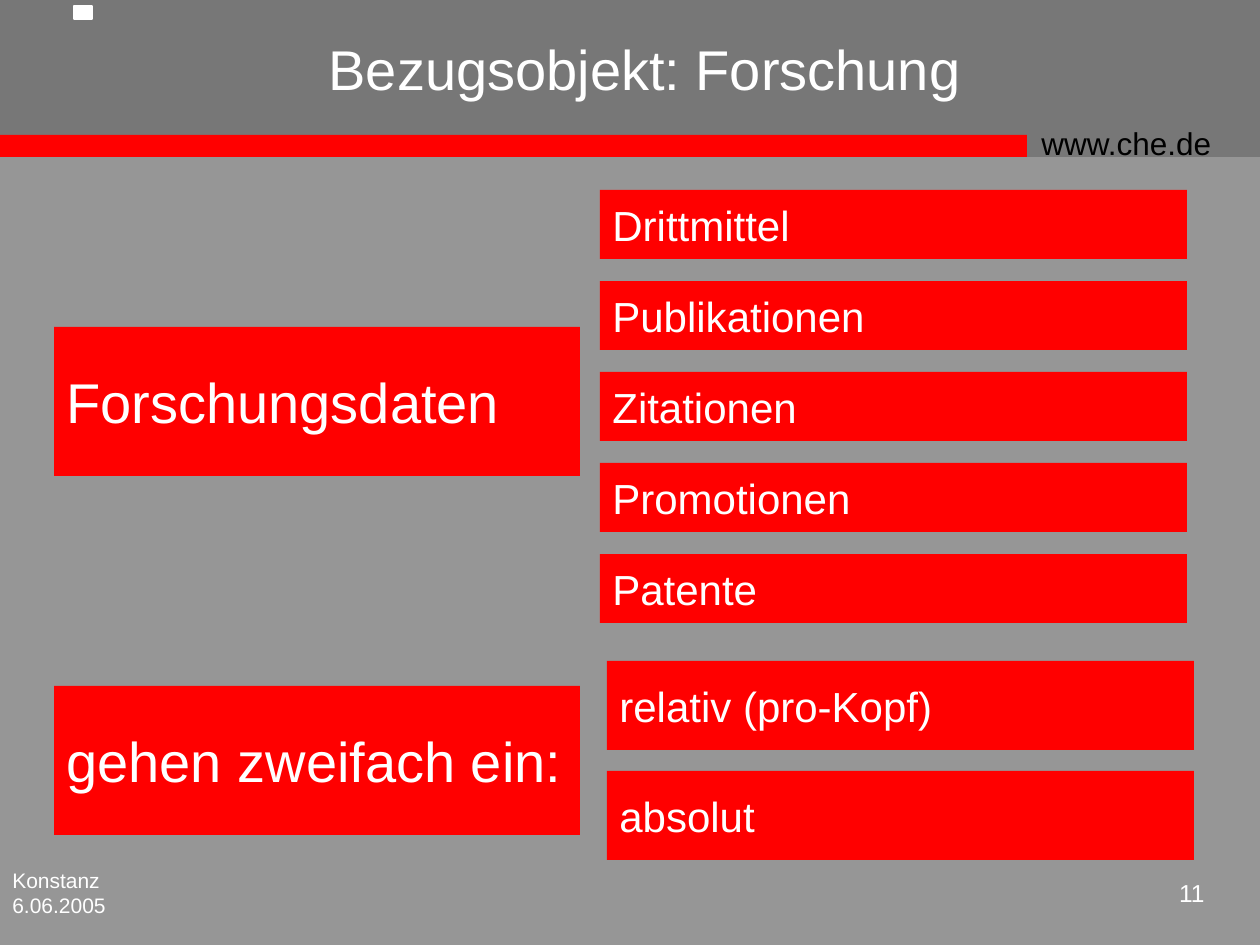
from dataclasses import dataclass

from pptx import Presentation
from pptx.dml.color import RGBColor
from pptx.enum.shapes import MSO_SHAPE
from pptx.enum.text import MSO_ANCHOR, PP_ALIGN
from pptx.util import Emu, Pt


@dataclass(frozen=True)
class Theme:
    font: str = "Arial"
    background: str = "969696"
    header: str = "777777"
    accent: str = "FF0000"
    light: str = "FFFFFF"
    dark: str = "000000"
    heading: int = 32
    item: int = 24
    web: int = 18
    number: int = 14
    footer: int = 12


THEME = Theme()
PX = 914400 / 126  # EMU per px

# Plain bars: (left, top, width, height), colour
BARS = [
    ((0, 0, 1260, 157), THEME.header),
    ((0, 135, 1027, 22), THEME.accent),
    ((74, 6, 18, 13), THEME.light),
]

# Labels: text, (left, top, width, height), size, format values
LABELS = [
    ("www.che.de", (1029, 118, 221, 50), THEME.web, {"color": THEME.dark}),
    ("11", (1144, 872, 73, 53), THEME.number, {"align": PP_ALIGN.RIGHT}),
    ("Konstanz\v6.06.2005", (0, 861, 343, 84), THEME.footer, {}),
    ("Bezugsobjekt: Forschung", (263, 0, 764, 136), THEME.heading,
     {"align": PP_ALIGN.CENTER, "anchor": MSO_ANCHOR.MIDDLE}),
]

# Columns of red boxes: texts, first box, vertical pitch, size
COLUMNS = [
    (["Forschungsdaten", "gehen zweifach ein:"], (54, 327, 526, 149), 359, THEME.heading),
    (["Drittmittel", "Publikationen", "Zitationen", "Promotionen", "Patente"],
     (600, 190, 587, 69), 91, THEME.item),
    (["relativ (pro-Kopf)", "absolut"], (607, 661, 587, 89), 110, THEME.item),
]


def emu(box):
    return [Emu(round(v * PX)) for v in box]


def write(sp, text, size, color=THEME.light, align=PP_ALIGN.LEFT,
          anchor=MSO_ANCHOR.TOP, wrap=True):
    tf = sp.text_frame
    tf.word_wrap, tf.vertical_anchor = wrap, anchor
    p = tf.paragraphs[0]
    p.text, p.alignment = text, align
    for r in p.runs:
        for name, value in {"name": THEME.font, "size": Pt(size)}.items():
            setattr(r.font, name, value)
        r.font.color.rgb = RGBColor.from_string(color)


def add_rect(s, box, color):
    sp = s.shapes.add_shape(MSO_SHAPE.RECTANGLE, *emu(box))
    sp.shadow.inherit = False
    sp.fill.solid()
    sp.fill.fore_color.rgb = RGBColor.from_string(color)
    sp.line.fill.background()
    return sp


def main():
    prs = Presentation()
    prs.slide_width, prs.slide_height = emu((1260, 945))
    s = prs.slides.add_slide(prs.slide_layouts[6])
    s.background.fill.solid()
    s.background.fill.fore_color.rgb = RGBColor.from_string(THEME.background)

    for box, color in BARS:
        sp = add_rect(s, box, color)
    # The last bar, the small square, is outlined
    sp.line.color.rgb = RGBColor.from_string(THEME.light)
    sp.line.width = Pt(0.75)

    for text, box, size, values in LABELS:
        write(s.shapes.add_textbox(*emu(box)), text, size, **values)

    for texts, (left, top, width, height), pitch, size in COLUMNS:
        for i, text in enumerate(texts):
            sp = add_rect(s, (left, top + i * pitch, width, height), THEME.accent)
            write(sp, text, size, anchor=MSO_ANCHOR.MIDDLE, wrap=False)

    prs.save("out.pptx")


if __name__ == "__main__":
    main()
